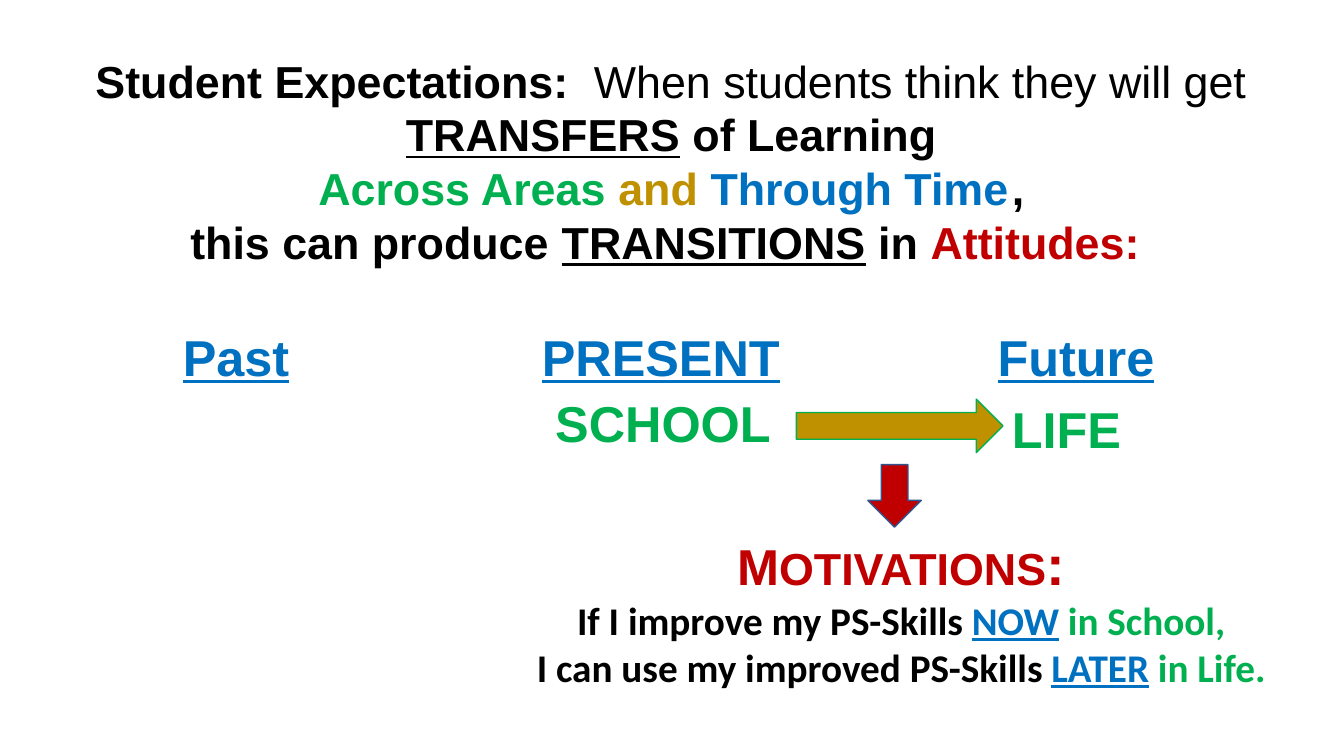
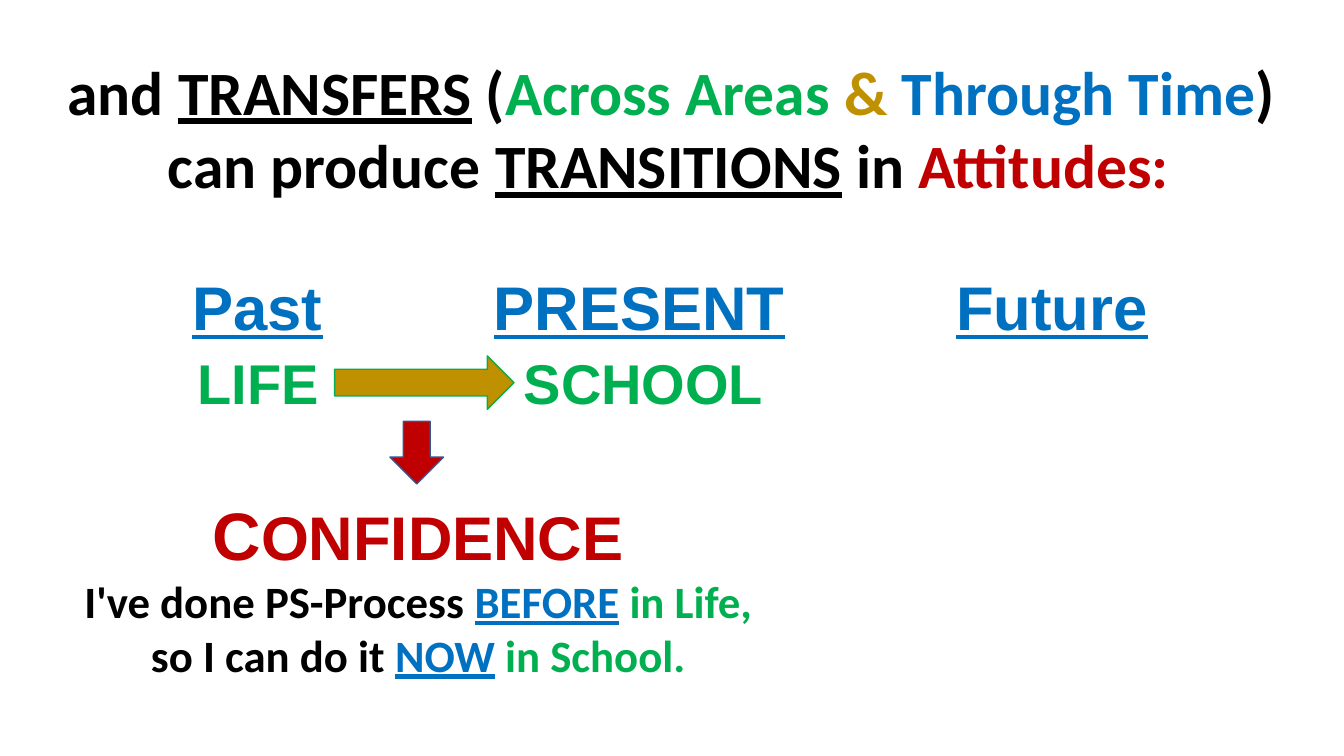
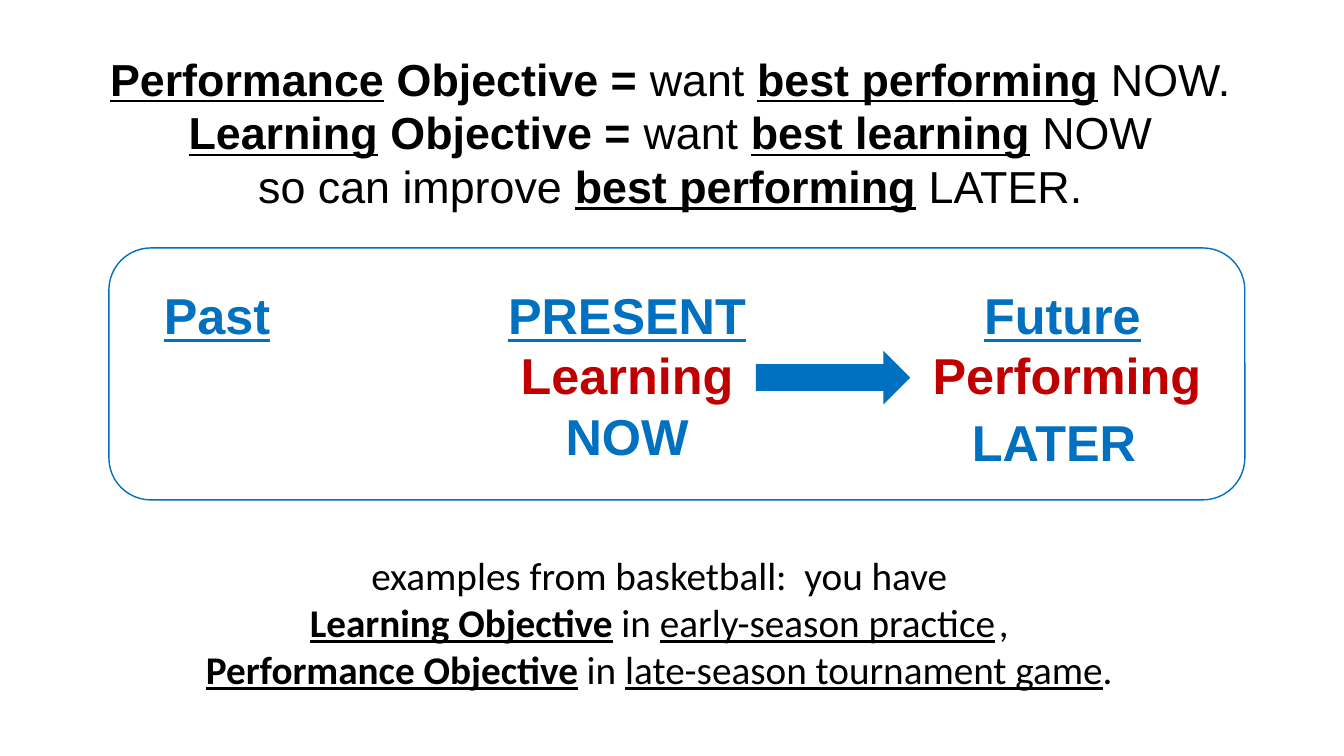
from lxml.etree import SubElement
from pptx import Presentation
from pptx.dml.color import RGBColor
from pptx.enum.shapes import MSO_SHAPE
from pptx.enum.text import MSO_ANCHOR, MSO_AUTO_SIZE, PP_ALIGN
from pptx.oxml.ns import qn
from pptx.util import Pt

BLACK = "000000"
BLUE = "0070C0"
GREEN = "00B050"
GOLD = "BF9000"
RED = "C00000"
OUTLINE = "325491"
PERIODS = ("Past", "PRESENT", "Future")
LABEL_WIDTH = 240
BREAK = ("\n",)


def write_runs(paragraph, font, size, runs):
    """Add runs given as (text, style letters b and u, colour, own size)."""
    for text, *details in runs:
        if text == "\n":
            paragraph.add_line_break()
            continue
        style, color, own_size = (details + ["", BLACK, size][len(details):])
        run = paragraph.add_run()
        run.text = text
        run.font.name = font
        run.font.size = Pt(own_size)
        run.font.bold = "b" in style
        run.font.underline = "u" in style
        run.font.color.rgb = RGBColor.from_string(color)


def add_text(slide, box, paragraphs):
    """Add a centred text box; each paragraph is (font, size, runs)."""
    text_frame = slide.shapes.add_textbox(*map(Pt, box)).text_frame
    text_frame.word_wrap = True
    for index, content in enumerate(paragraphs):
        paragraph = text_frame.add_paragraph() if index else text_frame.paragraphs[0]
        paragraph.alignment = PP_ALIGN.CENTER
        write_runs(paragraph, *content)


# Period centres and label centres are measured from the slide's left edge.
SLIDES = [
    {
        "periods": (33.8, 215.3, 36, (168.6, 472.1, 768.6)),
        "labels": [("SCHOOL", 473.6, 276.5, 36, GREEN), ("LIFE", 761.8, 280.8, 36, GREEN)],
        "shapes": [
            (MSO_SHAPE.DOWN_ARROW, (619.9, 331.9, 38.2, 44.6), RED, OUTLINE),
            (MSO_SHAPE.RIGHT_ARROW, (568.8, 285.1, 147.6, 38.2), GOLD, GREEN),
        ],
        "texts": [
            ((28.1, 34.6, 902.9, 162.7), [
                ("Arial", 32, [
                    ("Student Expectations:  ", "b"), ("When students think they will get",), BREAK,
                    ("TRANSFERS", "bu"), (" of Learning", "b"), BREAK,
                    ("Across Areas ", "b", GREEN), ("and ", "b", GOLD),
                    ("Through Time", "b", BLUE), (" ", "b", BLUE, 8), (",", "b"), BREAK,
                    ("this can produce ", "b"), ("TRANSITIONS", "bu"), (" in ", "b"),
                    ("Attitudes: ", "b", RED),
                ]),
            ]),
            ((337.7, 374.4, 612, 123.8), [
                ("Arial", 32, [("M", "b", RED, 36), ("OTIVATIONS", "b", RED), (":", "b", RED, 40)]),
                ("Calibri", 28, [
                    ("If I improve my PS-Skills ", "b"), ("NOW", "bu", BLUE),
                    (" in School,", "b", GREEN), BREAK,
                    ("I can use my improved PS-Skills ", "b"), ("LATER", "bu", BLUE),
                    (" in Life.", "b", GREEN),
                ]),
            ]),
        ],
    },
    {
        "periods": (33.8, 184.3, 44, (183.9, 456.8, 751.4)),
        "labels": [("SCHOOL", 459.6, 245.5, 40, GREEN), ("LIFE", 184.3, 245.5, 40, GREEN)],
        "shapes": [
            (MSO_SHAPE.DOWN_ARROW, (278.6, 301, 38.2, 44.6), RED, OUTLINE),
            (MSO_SHAPE.RIGHT_ARROW, (239, 254.2, 128.2, 38.2), GOLD, GREEN),
        ],
        "texts": [
            ((28.1, 34.6, 902.9, 113.8), [
                ("Calibri", 44, [
                    ("and ", "b"), ("TRANSFERS", "bu"), (" (", "b"),
                    ("Across Areas ", "b", GREEN), ("& ", "b", GOLD),
                    ("Through Time", "b", BLUE), (")", "b"), BREAK,
                    ("can produce ", "b"), ("TRANSITIONS", "bu"), (" in ", "b"),
                    ("Attitudes:", "b", RED), (" ", "", BLACK, 18),
                ]),
            ]),
            ((40.3, 348.5, 517, 143.3), [
                ("Arial", 44, [("C", "b", RED, 48), ("ONFIDENCE", "b", RED)]),
                ("Calibri", 32, [
                    ("I've done PS-Process ", "b"), ("BEFORE", "bu", BLUE),
                    (" in Life,", "b", GREEN), BREAK,
                    ("so I can do it ", "b"), ("NOW", "bu", BLUE), (" in School.", "b", GREEN),
                ]),
            ]),
        ],
    },
    {
        "periods": (20.9, 185.8, 36, (155, 447.9, 758.9)),
        "labels": [
            ("Learning", 447.9, 242.6, 36, RED), ("NOW", 447.9, 286, 36, BLUE),
            ("Performing", 762.1, 242.6, 36, RED), ("LATER", 752.9, 290.3, 36, BLUE),
        ],
        "shapes": [
            (MSO_SHAPE.RIGHT_ARROW, (540, 250.6, 110.2, 38.2), BLUE, None),
            (MSO_SHAPE.ROUNDED_RECTANGLE, (77.8, 177.1, 811.4, 180), None, BLUE),
        ],
        "texts": [
            ((68.4, 33.1, 820.8, 123.8), [
                ("Arial", 32, [
                    ("Performance", "bu"), (" Objective = ", "b"), ("want ",),
                    ("best performing", "bu"), (" ", "b"), ("NOW.",),
                ]),
                ("Arial", 32, [
                    ("Learning", "bu"), (" Objective = ", "b"), ("want ",),
                    ("best learning", "bu"), (" ", "b"), ("NOW",), BREAK,
                    ("so can improve ",), ("best performing", "bu"), (" ", "b"), ("LATER.",),
                ]),
            ]),
            ((136.1, 390.2, 669.6, 108.7), [
                ("Calibri", 28, [
                    ("examples from basketball:  you have",), BREAK,
                    ("Learning Objective", "bu"), (" in ",), ("early-season practice", "u"),
                    (" ", "", BLACK, 12), (",",), BREAK,
                    ("Performance Objective", "bu"), (" in ",),
                    ("late-season tournament game", "u"), (".",),
                ]),
            ]),
        ],
    },
]

presentation = Presentation()
presentation.slide_width = Pt(960)
presentation.slide_height = Pt(540)

for content in SLIDES:
    slide = presentation.slides.add_slide(presentation.slide_layouts[5])

    left, top, size, centres = content["periods"]
    title = slide.shapes.title
    title.left, title.top, title.width, title.height = map(Pt, (left, top, 890.6, 64.8))
    title.text_frame.vertical_anchor = MSO_ANCHOR.BOTTOM
    title.text_frame.auto_size = MSO_AUTO_SIZE.NONE
    paragraph = title.text_frame.paragraphs[0]
    paragraph.alignment = PP_ALIGN.LEFT
    paragraph.line_spacing = 0.9
    tab_list = SubElement(paragraph._p.get_or_add_pPr(), qn("a:tabLst"))
    for period, centre in zip(PERIODS, centres):
        position = Pt(centre - left) - title.text_frame.margin_left
        SubElement(tab_list, qn("a:tab"), pos=str(position), algn="ctr")
        write_runs(paragraph, "Arial", size, [("\t", "b", BLUE), (period, "bu", BLUE)])

    for text, centre, top, size, color in content["labels"]:
        box = (centre - LABEL_WIDTH / 2, top, LABEL_WIDTH, size * 1.4)
        add_text(slide, box, [("Arial", size, [(text, "b", color)])])

    for box, paragraphs in content["texts"]:
        add_text(slide, box, paragraphs)

    for preset, box, fill, line in content["shapes"]:
        shape = slide.shapes.add_shape(preset, *map(Pt, box))
        shape.shadow.inherit = False
        if fill:
            shape.fill.solid()
            shape.fill.fore_color.rgb = RGBColor.from_string(fill)
        else:
            shape.fill.background()
        if line:
            shape.line.color.rgb = RGBColor.from_string(line)
            shape.line.width = Pt(1)
        else:
            shape.line.fill.background()

presentation.save("out.pptx")
